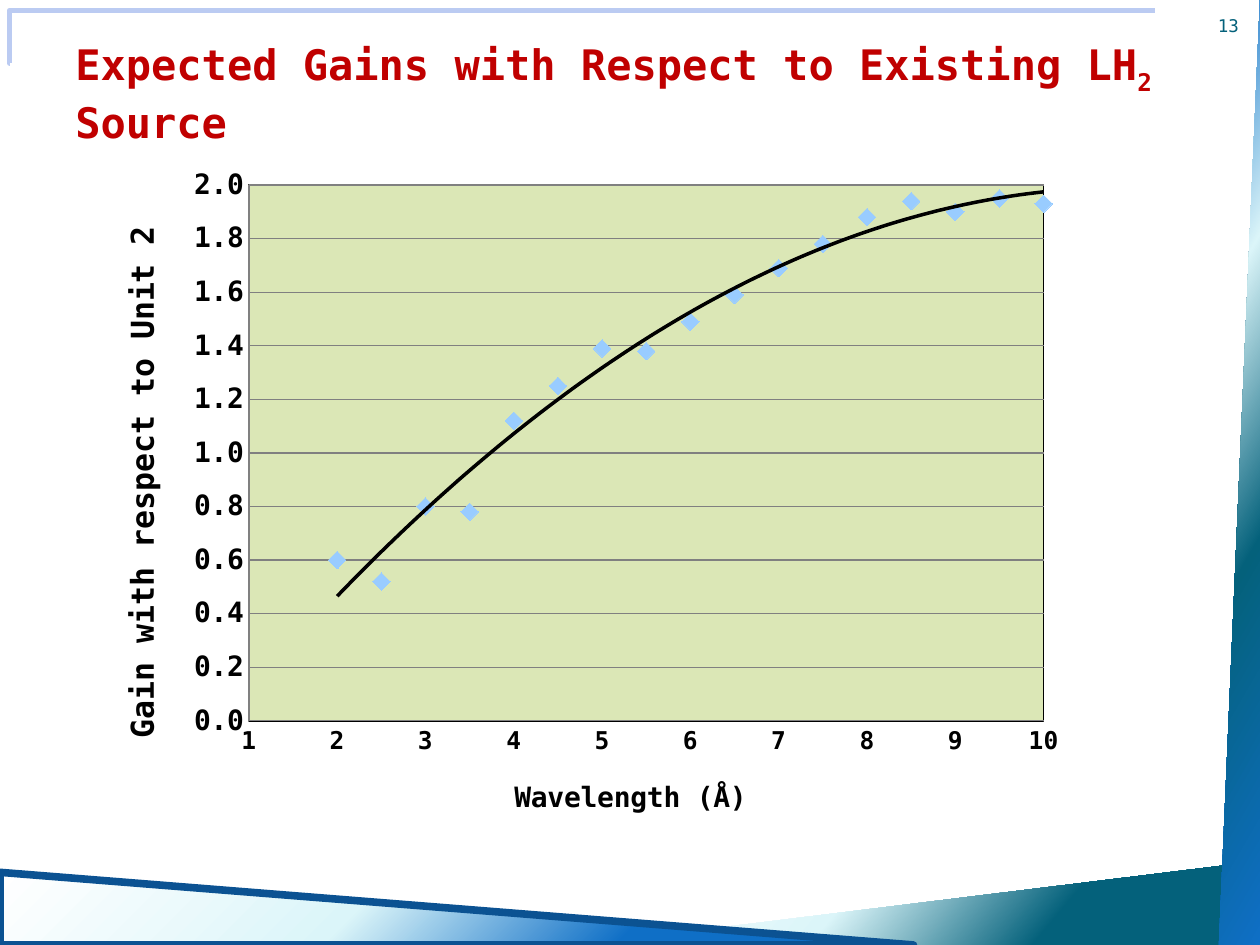
from pptx import Presentation
from pptx.chart.data import XyChartData
from pptx.dml.color import RGBColor
from pptx.enum.chart import XL_CHART_TYPE, XL_MARKER_STYLE, XL_TICK_MARK
from pptx.enum.shapes import MSO_CONNECTOR, MSO_SHAPE
from pptx.enum.text import MSO_ANCHOR, PP_ALIGN
from pptx.oxml import parse_xml
from pptx.oxml.ns import nsdecls, qn
from pptx.util import Pt

FONT = "DejaVu Sans Mono"
BLACK, GRID, RED, TEAL = "000000", "808080", "C00000", "04617B"

TITLE = [("Expected Gains with Respect to Existing LH", False), ("2", True), (" Source", False)]
GAINS = [1.93, 1.95, 1.9, 1.94, 1.88, 1.78, 1.69, 1.59, 1.49,
         1.38, 1.39, 1.25, 1.12, 0.78, 0.8, 0.52, 0.6]
LONGEST, STEP = 10, 0.5

# place, gradient colours, gradient angle, mirrored, outline
WEDGES = [
    ((330, 492, 390, 48), ("FFFFFF", "DBF5F9", TEAL, TEAL), 140, True, None),
    ((696.5, 0, 23.5, 540), ("0F6FC6", TEAL, "DBF5F9", "0F6FC6"), 330, True, None),
    ((0, 498.5, 522, 41.5), ("FFFFFF", "DBF5F9", "0F6FC6", "0F6FC6"), 45, False, "0B5292"),
]
STOPS = (0, 40, 70, 100)

PLOT_LAYOUT = {"x": 0.137, "y": 0.109, "w": 0.757, "h": 0.729}
WAVELENGTH_AXIS = {
    "title": "Wavelength (Å)", "title_size": 16, "title_at": {"x": 0.385, "y": 0.91},
    "turn": 0, "label_size": 14, "number_format": "0", "grid": False,
    "scale": {"minimum_scale": 1, "maximum_scale": 10, "major_unit": 1},
}
GAIN_AXIS = {
    "title": "Gain with respect to Unit 2", "title_size": 18, "title_at": {"x": 0.01, "y": 0.157},
    "turn": -90, "label_size": 16, "number_format": "0.0", "grid": True,
    "scale": {"minimum_scale": 0, "maximum_scale": 2, "major_unit": 0.2},
}


def color(value):
    return RGBColor.from_string(value)


def set_font(font, size, value, bold=False):
    for name, setting in {"name": FONT, "size": Pt(size), "bold": bold}.items():
        setattr(font, name, setting)
    font.color.rgb = color(value)


def set_line(line, value, width):
    line.color.rgb = color(value)
    line.width = Pt(width)


def add_wedge(page, place, colors, angle, mirrored, outline):
    wedge = page.shapes.add_shape(MSO_SHAPE.RIGHT_TRIANGLE, *map(Pt, place))
    wedge.shadow.inherit = False
    stops = "".join(f'<a:gs pos="{stop * 1000}"><a:srgbClr val="{value}"/></a:gs>'
                    for stop, value in zip(STOPS, colors))
    wedge._element.spPr.find(qn("a:prstGeom")).addnext(parse_xml(
        f'<a:gradFill {nsdecls("a")} rotWithShape="1"><a:gsLst>{stops}</a:gsLst>'
        f'<a:lin ang="{angle * 60000}" scaled="0"/></a:gradFill>'))
    if mirrored:
        wedge._element.spPr.find(qn("a:xfrm")).set("flipH", "1")
    if outline:
        set_line(wedge.line, outline, 4.33)
    else:
        wedge.line.fill.background()


def add_corner_line(page):
    corner = page.shapes.add_connector(MSO_CONNECTOR.ELBOW, Pt(660), Pt(6), Pt(6), Pt(36))
    set_line(corner.line, "BBCBF2", 3)
    properties = corner._element.spPr
    properties.append(parse_xml(f'<a:effectLst {nsdecls("a")}/>'))
    geometry = properties.find(qn("a:prstGeom"))
    for child in list(geometry):
        geometry.remove(child)
    geometry.append(parse_xml(
        f'<a:avLst {nsdecls("a")}><a:gd name="adj1" fmla="val 100100"/></a:avLst>'))


def add_text(page, place, spans, size, value, bold, anchor, align):
    """Add a one-paragraph box; each span is its text and whether it is a subscript."""
    box = page.shapes.add_textbox(*map(Pt, place))
    frame = box.text_frame
    frame.word_wrap = True
    frame.vertical_anchor = anchor
    para = frame.paragraphs[0]
    para.alignment = align
    for text, subscript in spans:
        span = para.add_run()
        span.text = text
        set_font(span.font, size, value, bold)
        if subscript:
            span.font._element.set("baseline", "-25000")


def set_layout(parent, index, fractions, inner=False):
    """Put a manual layout at the given child position of a chart element."""
    for old in parent.findall(qn("c:layout")):
        parent.remove(old)
    target = '<c:layoutTarget val="inner"/>' if inner else ""
    modes = "".join(f'<c:{key}Mode val="edge"/>' for key in "xy")
    values = "".join(f'<c:{key} val="{value}"/>' for key, value in fractions.items())
    parent.insert(index, parse_xml(
        f'<c:layout {nsdecls("c")}><c:manualLayout>{target}{modes}{values}'
        '</c:manualLayout></c:layout>'))


def format_axis(axis, design):
    settings = {"has_major_gridlines": design["grid"], "has_minor_gridlines": False,
                "major_tick_mark": XL_TICK_MARK.NONE, "minor_tick_mark": XL_TICK_MARK.NONE}
    for name, setting in {**settings, **design["scale"]}.items():
        setattr(axis, name, setting)
    set_line(axis.format.line, GRID, 0.75)
    if design["grid"]:
        set_line(axis.major_gridlines.format.line, GRID, 0.75)
    labels = axis.tick_labels
    labels.number_format = design["number_format"]
    labels.number_format_is_linked = False
    set_font(labels.font, design["label_size"], BLACK, True)
    frame = axis.axis_title.text_frame
    span = frame.paragraphs[0].add_run()
    span.text = design["title"]
    set_font(span.font, design["title_size"], BLACK, True)
    body = frame._txBody.find(qn("a:bodyPr"))
    body.set("rot", str(design["turn"] * 60000))
    body.set("vert", "horz")
    set_layout(axis.axis_title._element, 1, design["title_at"])


def add_gain_chart(page):
    data = XyChartData()
    points = data.add_series("Series 1")
    for index, gain in enumerate(GAINS):
        points.add_data_point(LONGEST - index * STEP, gain)
    chart = page.shapes.add_chart(
        XL_CHART_TYPE.XY_SCATTER, Pt(60), Pt(60), Pt(600), Pt(420), data).chart
    chart.has_title = False
    chart.has_legend = False
    set_font(chart.font, 10, BLACK)
    format_axis(chart.category_axis, WAVELENGTH_AXIS)
    format_axis(chart.value_axis, GAIN_AXIS)

    plot = chart.plots[0]
    plot.vary_by_categories = False
    series = plot.series[0]
    series.format.line.fill.background()
    marker = series.marker
    marker.style = XL_MARKER_STYLE.DIAMOND
    marker.size = 10
    marker.format.fill.solid()
    marker.format.fill.fore_color.rgb = color("99CCFF")
    marker.format.line.fill.background()
    series._element.find(qn("c:xVal")).addprevious(parse_xml(
        f'<c:trendline {nsdecls("c", "a")}><c:spPr><a:ln w="{Pt(2)}"><a:solidFill>'
        f'<a:srgbClr val="{BLACK}"/></a:solidFill></a:ln></c:spPr>'
        '<c:trendlineType val="poly"/><c:order val="2"/>'
        '<c:dispRSqr val="0"/><c:dispEq val="0"/></c:trendline>'))

    area = chart._chartSpace.chart.plotArea
    set_layout(area, 0, PLOT_LAYOUT, inner=True)
    area.append(parse_xml(
        f'<c:spPr {nsdecls("c", "a")}><a:solidFill><a:srgbClr val="DBE7B6"/></a:solidFill>'
        f'<a:ln w="{Pt(0.75)}"><a:solidFill><a:srgbClr val="{BLACK}"/></a:solidFill></a:ln>'
        '</c:spPr>'))


def main():
    deck = Presentation()
    deck.slide_width, deck.slide_height = Pt(720), Pt(540)
    page = deck.slides.add_slide(deck.slide_layouts[6])
    for wedge in WEDGES:
        add_wedge(page, *wedge)
    add_corner_line(page)
    add_text(page, (36, 21.6, 648, 62.6), TITLE, 24, RED, True,
             MSO_ANCHOR.MIDDLE, PP_ALIGN.LEFT)
    add_text(page, (684, 6, 36, 18), [("13", False)], 10, TEAL, False,
             MSO_ANCHOR.BOTTOM, PP_ALIGN.CENTER)
    add_gain_chart(page)
    deck.save("out.pptx")


if __name__ == "__main__":
    main()
